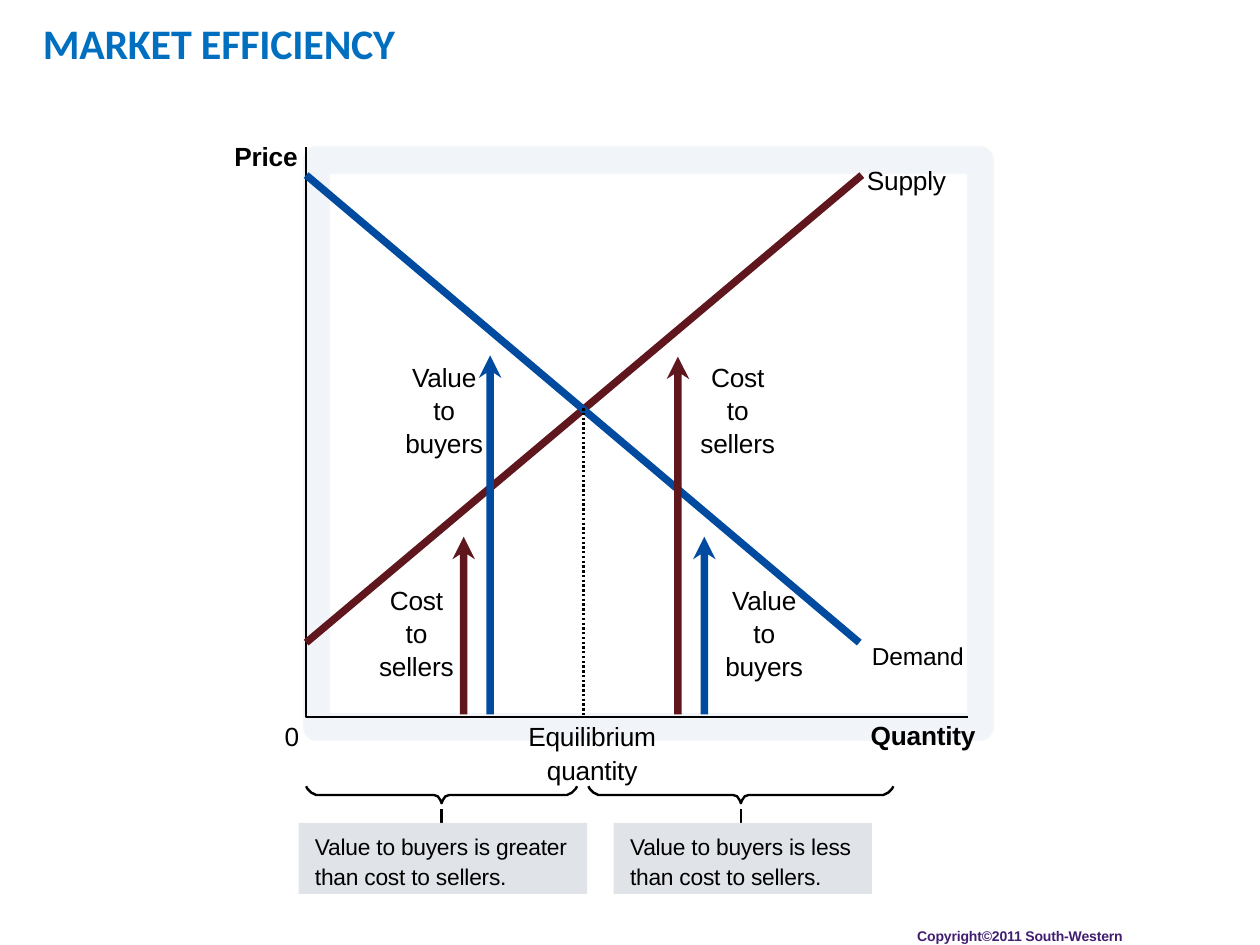
from collections import namedtuple

from lxml.etree import SubElement
from pptx import Presentation
from pptx.dml.color import RGBColor
from pptx.enum.dml import MSO_LINE_DASH_STYLE as Dash
from pptx.enum.shapes import MSO_CONNECTOR as Link, MSO_SHAPE as Preset
from pptx.enum.text import PP_ALIGN as Align
from pptx.oxml.ns import qn
from pptx.util import Inches, Pt

Box = namedtuple("Box", "left top width height")

COLUMNS, ROWS = 100, 75
BLACK, RED, BLUE, TITLE_BLUE = "000000", "5F161D", "004B9F", "006FC0"
PURPLE, CAPTION_GREY = "411D71", "E0E4E9"
PLAIN = {"size": Pt(15), "name": "Arial", "bold": False}
BOLD = {**PLAIN, "bold": True}
SMALL = {**PLAIN, "size": Pt(14)}
CAPTION = {**PLAIN, "size": Pt(13)}
HEADING = {"size": Pt(24), "name": "Calibri", "bold": True}
FOOTNOTE = {**BOLD, "size": Pt(8)}


def cells(*counts):
    """Turn counts of grid cells into slide lengths."""
    return [Inches(count / 10) for count in counts]


def color(code):
    """Return the colour of a hex string."""
    return RGBColor.from_string(code)


def inside(box, left, top, width=0, height=0):
    """Return a box whose corner is measured from the corner of another."""
    return Box(box.left + left, box.top + top, width, height)


def set_all(target, values):
    """Set each attribute of the target from a dict."""
    for name, value in values.items():
        setattr(target, name, value)


def paint(shape, fill=None, line=None, weight=0):
    """Give a shape a flat fill and outline."""
    shape.shadow.inherit = False
    if fill:
        shape.fill.solid()
        shape.fill.fore_color.rgb = color(fill)
    else:
        shape.fill.background()
    if line:
        shape.line.color.rgb = color(line)
        shape.line.width = Pt(weight)
    else:
        shape.line.fill.background()


def write(page, box, lines, style, ink=BLACK, align=Align.LEFT, wrap=False,
          inset=0.2, leading=1.0, gap=1):
    """Place lines of text in a box."""
    frame = page.shapes.add_textbox(*cells(*box)).text_frame
    set_all(frame, {"word_wrap": wrap, "margin_left": 0, "margin_right": 0,
                    "margin_top": cells(inset)[0], "margin_bottom": 0})
    for index, line in enumerate(lines):
        para = frame.add_paragraph() if index else frame.paragraphs[0]
        set_all(para, {"alignment": align, "line_spacing": leading})
        if index:
            para.space_before = Pt(gap)
        span = para.add_run()
        span.text = line
        set_all(span.font, style)
        span.font.color.rgb = color(ink)
        span.font._element.set("spc", "-10")


def draw_line(page, box, start, end, ink, weight, dash=None):
    """Draw a straight line between two points of a box."""
    points = [inside(box, *point)[:2] for point in (start, end)]
    line = page.shapes.add_connector(Link.STRAIGHT, *cells(*points[0], *points[1]))
    line.line.color.rgb = color(ink)
    line.line.width = Pt(weight)
    if dash:
        line.line.dash_style = dash
    SubElement(line._element.spPr, qn("a:effectLst"))


def draw_path(page, box, points, close=False, **look):
    """Draw an outline through points of a box."""
    spots = [cells(*inside(box, *point)[:2]) for point in points]
    builder = page.shapes.build_freeform(*spots[0], scale=1.0)
    builder.add_line_segments(spots[1:], close=close)
    paint(builder.convert_to_shape(), **look)


def mirrored(half):
    """Return points on both sides of a vertical axis, left to right."""
    return [(-x, y) for x, y in reversed(half)] + half


def add_arrow(page, box, ink):
    """Draw a notched upward arrow that fills a box."""
    half = box.width / 2
    right = [(0, 0), (half, 1.8), (half / 3, 1.4), (half / 3, box.height)]
    draw_path(page, inside(box, half, 0), mirrored(right), close=True, fill=ink)


def add_frame(page, box):
    """Draw the pale double frame of the graph."""
    corners = [(0, box.height), (box.width, box.height), (box.width, 0), (0, 0)]
    for ink, weight in (("F3F6F8", 15.5), ("F1F4F8", 14)):
        draw_path(page, box, corners, close=True, line=ink, weight=weight)


def add_graph(page, box):
    """Draw the axes, curves, arrows and labels of the market."""
    add_frame(page, inside(box, 0.8, 1, 52.7, 45))
    axes = [(0, 0), (0, box.height), (box.width, box.height)]
    draw_path(page, box, axes, line=BLACK, weight=1.37)
    high, low = 2.2, 39.3
    draw_line(page, box, (0, low), (44.1, high), RED, 4.25)
    draw_line(page, box, (0, high), (43.9, low), BLUE, 4.25)
    for middle, tip, ink in ((12.5, 30.9, RED), (29.5, 16.6, RED),
                             (14.6, 16.5, BLUE), (31.6, 30.9, BLUE)):
        add_arrow(page, inside(box, middle - 0.9, tip, 1.8, 45 - tip), ink)
    draw_line(page, box, (22, 20.7), (22, box.height), BLACK, 1.37, Dash.ROUND_DOT)

    for text, left, top, width, style in (
            ("Quantity", 44.8, 45.2, 8.7, BOLD), ("Price", -5.7, -0.8, 5.4, BOLD),
            ("0", -1.7, 45.3, 1.4, PLAIN), ("Supply", 44.5, 1.1, 6.7, PLAIN),
            ("Demand", 44.9, 39, 7.6, SMALL)):
        write(page, inside(box, left, top, width, 2.8), [text], style)
    for text, left, top, width in (
            ("Cost to sellers", 5.6, 34.6, 6.3), ("Cost to sellers", 31.1, 16.9, 6.3),
            ("Value to buyers", 7.7, 16.9, 6.5), ("Value to buyers", 33.1, 34.6, 6.5)):
        write(page, inside(box, left, top, width, 8), [text], PLAIN,
              align=Align.CENTER, wrap=True, inset=0, leading=1.04)
    write(page, inside(box, 17.4, 45.3, 10.6, 5.4), ["Equilibrium", "quantity"],
          PLAIN, align=Align.CENTER)


def add_brace(page, box):
    """Draw a brace that opens upward and a stem below its point."""
    half = box.width / 2
    right = [(0.1, 1.1), (0.3, 0.8), (0.6, 0.7), (half - 0.8, 0.7),
             (half - 0.4, 0.5), (half - 0.1, 0.2), (half, 0)]
    points = mirrored([(0, box.height)] + right)
    middle = inside(box, half, 0)
    draw_path(page, middle, points, line=BLACK, weight=1.37)
    draw_line(page, middle, (0, 1.8), (0, 2.9), BLACK, 1.5)


def add_caption(page, box, lines):
    """Place a grey panel with two lines of text."""
    paint(page.shapes.add_shape(Preset.RECTANGLE, *cells(*box)), fill=CAPTION_GREY)
    write(page, inside(box, 1.3, 0.2, box.width - 2.3, 5), lines, CAPTION,
          inset=0.6, gap=1.3)


def main():
    """Build the slide and save it."""
    deck = Presentation()
    deck.slide_width, deck.slide_height = cells(COLUMNS, ROWS)
    page = deck.slides.add_slide(deck.slide_layouts[6])
    write(page, Box(3.4, 1.2, 42.7, 7.1), ["MARKET EFFICIENCY"], HEADING, TITLE_BLUE)
    add_graph(page, Box(24.3, 11.7, 52.5, 45.2))
    for left, width, panel, span, word in ((24.3, 21.5, 23.7, 22.9, "greater"),
                                           (46.7, 24.2, 48.7, 20.5, "less")):
        add_brace(page, Box(left, 62.4, width, 1.35))
        add_caption(page, Box(panel, 65.3, span, 5.65),
                    [f"Value to buyers is {word}", "than cost to sellers."])
    write(page, Box(72.8, 73.4, 17.4, 1.6), ["Copyright©2011 South-Western"],
          FOOTNOTE, PURPLE)
    deck.save("out.pptx")


if __name__ == "__main__":
    main()
